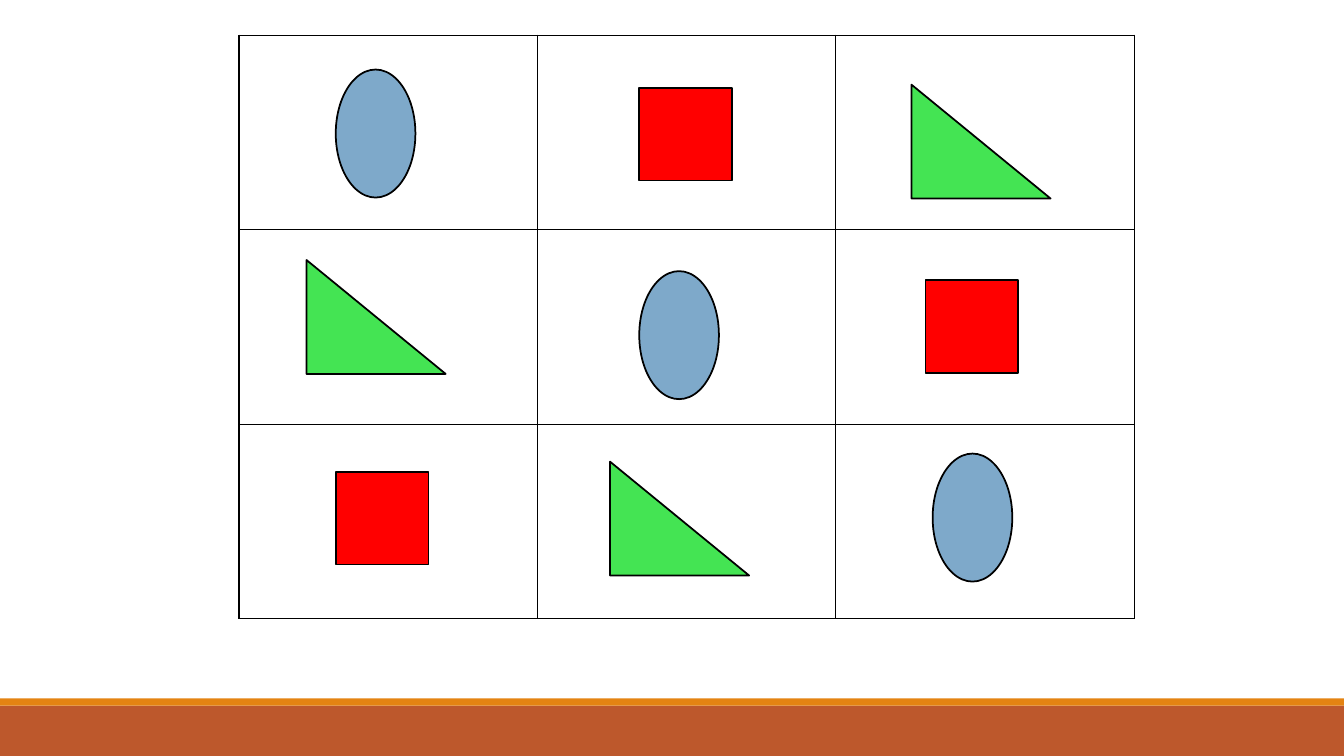
"""Build a slide with a three by three grid of coloured shapes."""
from lxml import etree
from pptx import Presentation
from pptx.dml.color import RGBColor
from pptx.enum.shapes import MSO_SHAPE
from pptx.oxml import parse_xml
from pptx.util import Inches, Pt

SIZE = (13.33, 7.5)
BANDS = [
    ((0, 7, 13.33, 0.5), "BD582C"),
    ((0, 6.93, 13.33, 0.07), "E48312"),
]
GRID = {"left": 2.37, "top": 0.35, "col": 2.96, "row": 1.93, "count": 3}
KINDS = {
    "oval": (MSO_SHAPE.OVAL, 0.79, 1.27, "7EA9CA"),
    "square": (MSO_SHAPE.RECTANGLE, 0.92, 0.92, "FF0000"),
    "triangle": (MSO_SHAPE.RIGHT_TRIANGLE, 1.38, 1.13, "44E453"),
}
FIGURES = [
    ("oval", 3.33, 0.69), ("square", 6.34, 0.87), ("triangle", 9.04, 0.84),
    ("triangle", 3.04, 2.58), ("oval", 6.34, 2.69), ("square", 9.18, 2.78),
    ("square", 3.33, 4.68), ("triangle", 6.05, 4.58), ("oval", 9.25, 4.5),
]
BLACK = "000000"
NS = "http://schemas.openxmlformats.org/drawingml/2006/main"


def rgb(value):
    """Turn a hex string into a colour."""
    return RGBColor.from_string(value)


def add_figure(s, kind, box, fill, line=None):
    """Add a filled preset shape, outlined when a line colour is given."""
    sp = s.shapes.add_shape(kind, *map(Inches, box))
    sp.shadow.inherit = False
    sp.fill.solid()
    sp.fill.fore_color.rgb = rgb(fill)
    if line:
        sp.line.color.rgb = rgb(line)
        sp.line.width = Pt(1.25)
    else:
        sp.line.fill.background()


def add_borders(cell):
    """Draw a one point border on every side of a cell."""
    for i, side in enumerate(("lnL", "lnR", "lnT", "lnB")):
        ln = parse_xml(
            f'<a:{side} xmlns:a="{NS}" w="{Pt(1)}"><a:solidFill>'
            f'<a:srgbClr val="{BLACK}"/></a:solidFill></a:{side}>')
        cell._tc.get_or_add_tcPr().insert(i, ln)


def add_grid(s, left, top, col, row, count):
    """Add the empty bordered table."""
    box = (left, top, col * count, row * count)
    tbl = s.shapes.add_table(count, count, *map(Inches, box)).table
    tbl.first_row = tbl.horz_banding = False
    for i in range(count):
        tbl.columns[i].width = Inches(col)
        tbl.rows[i].height = Inches(row)
    for cell in tbl.iter_cells():
        cell.fill.background()
        add_borders(cell)


def main():
    """Build and save the slide."""
    prs = Presentation()
    prs.slide_width, prs.slide_height = map(Inches, SIZE)
    s = prs.slides.add_slide(prs.slide_layouts[6])
    for box, fill in BANDS:
        add_figure(s, MSO_SHAPE.RECTANGLE, box, fill)
    add_grid(s, **GRID)
    for name, left, top in FIGURES:
        kind, width, height, fill = KINDS[name]
        add_figure(s, kind, (left, top, width, height), fill, BLACK)
    prs.save("out.pptx")


if __name__ == "__main__":
    main()
